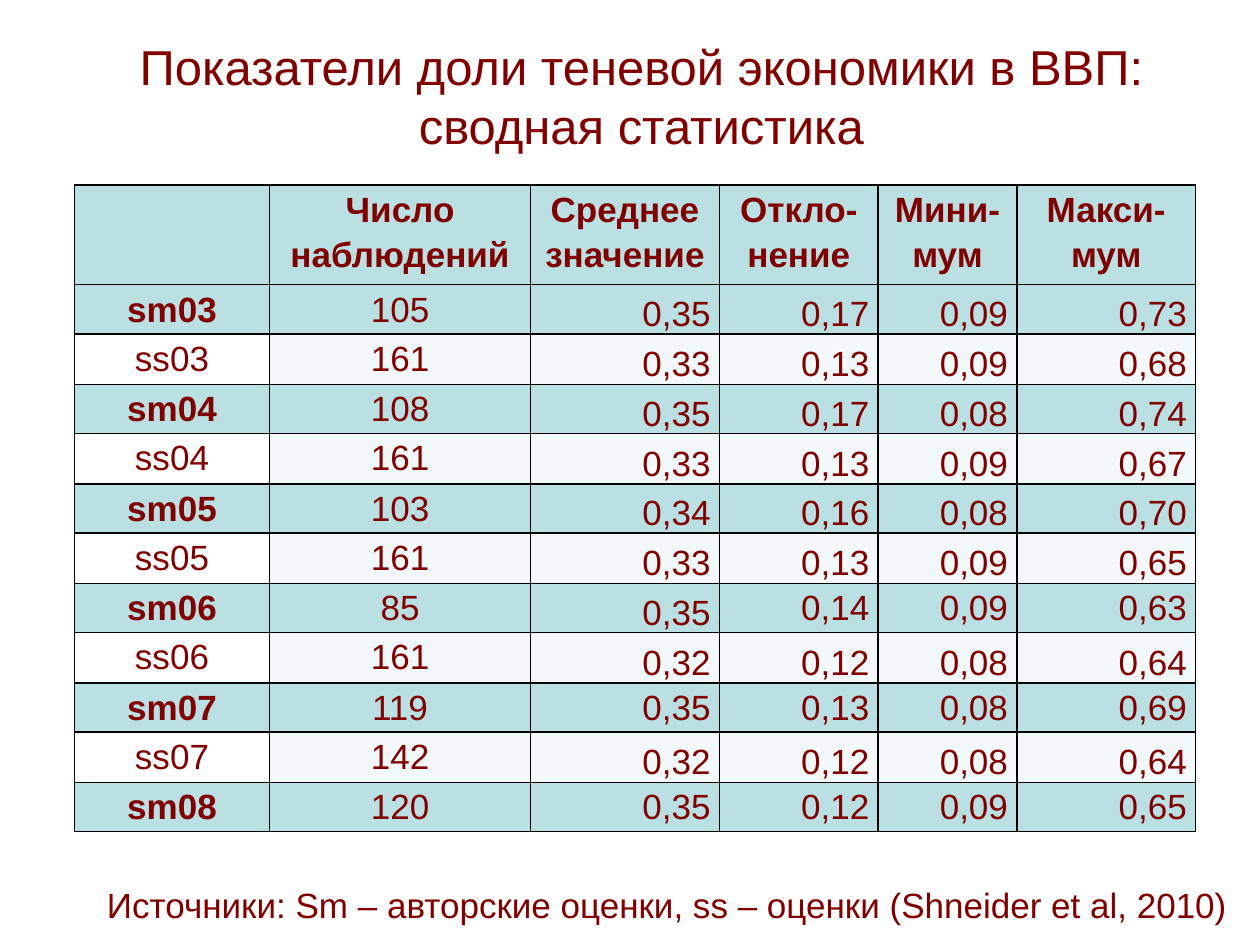
import dataclasses

import lxml.etree
import pptx
import pptx.dml.color
import pptx.enum.text
import pptx.oxml.ns
import pptx.util

Inches = pptx.util.Inches
Pt = pptx.util.Pt
ALIGN = pptx.enum.text.PP_ALIGN
ANCHOR = pptx.enum.text.MSO_ANCHOR
qn = pptx.oxml.ns.qn

FONT = "Arial"
TEXT = "800000"
TEAL = "BBE0E3"
PALE = "F3F9FA"
WHITE = "FFFFFF"
BORDER = "000000"


@dataclasses.dataclass
class Estimate:
    name: str
    count: str
    values: str  # mean, deviation, minimum, maximum
    bottom: int = 4  # how many leading values sit at the cell bottom


HEADERS = ["", "Число наблюдений", "Среднее значение", "Откло-нение", "Мини-мум", "Макси-мум"]
ESTIMATES = [
    Estimate("sm03", "105", "0,35 0,17 0,09 0,73"),
    Estimate("ss03", "161", "0,33 0,13 0,09 0,68"),
    Estimate("sm04", "108", "0,35 0,17 0,08 0,74"),
    Estimate("ss04", "161", "0,33 0,13 0,09 0,67"),
    Estimate("sm05", "103", "0,34 0,16 0,08 0,70"),
    Estimate("ss05", "161", "0,33 0,13 0,09 0,65"),
    Estimate("sm06", "85", "0,35 0,14 0,09 0,63", bottom=1),
    Estimate("ss06", "161", "0,32 0,12 0,08 0,64"),
    Estimate("sm07", "119", "0,35 0,13 0,08 0,69", bottom=0),
    Estimate("ss07", "142", "0,32 0,12 0,08 0,64"),
    Estimate("sm08", "120", "0,35 0,12 0,09 0,65", bottom=0),
]
COLUMN_WIDTHS = [1.55, 2.07, 1.5, 1.26, 1.1, 1.42]


def rgb(color: str) -> pptx.dml.color.RGBColor:
    return pptx.dml.color.RGBColor.from_string(color)


def write(tf, text: str, size: float, align, bold: bool = False) -> None:
    tf.text = text
    p = tf.paragraphs[0]
    p.alignment = align
    for r in p.runs:
        r.font.name = FONT
        r.font.size = Pt(size)
        r.font.bold = bold
        r.font.color.rgb = rgb(TEXT)


def add_borders(cell) -> None:
    tc_pr = cell._tc.get_or_add_tcPr()
    for side in ("a:lnL", "a:lnR", "a:lnT", "a:lnB"):
        ln = lxml.etree.SubElement(tc_pr, qn(side), w=str(Pt(1)))
        fill = lxml.etree.SubElement(ln, qn("a:solidFill"))
        lxml.etree.SubElement(fill, qn("a:srgbClr"), val=BORDER)


def fill_cell(cell, text: str, fill: str, align=ALIGN.CENTER,
              anchor=ANCHOR.TOP, bold: bool = False) -> None:
    add_borders(cell)
    cell.fill.solid()
    cell.fill.fore_color.rgb = rgb(fill)
    cell.margin_left = cell.margin_right = Inches(0.07)
    cell.margin_top = cell.margin_bottom = 0
    cell.vertical_anchor = anchor
    write(cell.text_frame, text, 20, align, bold)
    cell.text_frame.paragraphs[0].line_spacing = 1.15


def fill_estimate(table, row: int, est: Estimate) -> None:
    own = est.name.startswith("sm")
    fill = TEAL if own else PALE
    fill_cell(table.cell(row, 0), est.name, TEAL if own else WHITE, bold=own)
    fill_cell(table.cell(row, 1), est.count, fill)
    for i, value in enumerate(est.values.split()):
        anchor = ANCHOR.BOTTOM if i < est.bottom else ANCHOR.TOP
        fill_cell(table.cell(row, i + 2), value, fill, ALIGN.RIGHT, anchor)


def main() -> None:
    prs = pptx.Presentation()
    prs.slide_width, prs.slide_height = Inches(10), Inches(7.5)
    s = prs.slides.add_slide(prs.slide_layouts[5])

    # Title
    title = s.shapes.title
    title.left, title.top = Inches(0.59), Inches(0.13)
    title.width, title.height = Inches(9), Inches(1.25)
    title.text_frame.vertical_anchor = ANCHOR.MIDDLE
    write(title.text_frame, "Показатели доли теневой экономики в ВВП: сводная статистика",
          28, ALIGN.CENTER)

    # Summary table: header row, then one row per estimate
    table = s.shapes.add_table(len(ESTIMATES) + 1, len(HEADERS), Inches(0.59), Inches(1.47),
                               Inches(8.9), Inches(5.12)).table
    for column, width in zip(table.columns, COLUMN_WIDTHS):
        column.width = Inches(width)
    table.rows[0].height = Inches(0.79)
    for i, header in enumerate(HEADERS):
        fill_cell(table.cell(0, i), header, TEAL, bold=True)
    for row, est in enumerate(ESTIMATES, start=1):
        table.rows[row].height = Inches(0.39 if row % 2 else 0.4)
        fill_estimate(table, row, est)

    # Sources
    note = s.shapes.add_textbox(Inches(0.75), Inches(6.96), Inches(9.15), Inches(0.44))
    tf = note.text_frame
    tf.word_wrap = False
    tf.auto_size = pptx.enum.text.MSO_AUTO_SIZE.SHAPE_TO_FIT_TEXT
    write(tf, "Источники: Sm – авторские оценки, ss – оценки (Shneider et al, 2010)",
          20, ALIGN.LEFT)

    prs.save("out.pptx")


if __name__ == "__main__":
    main()
